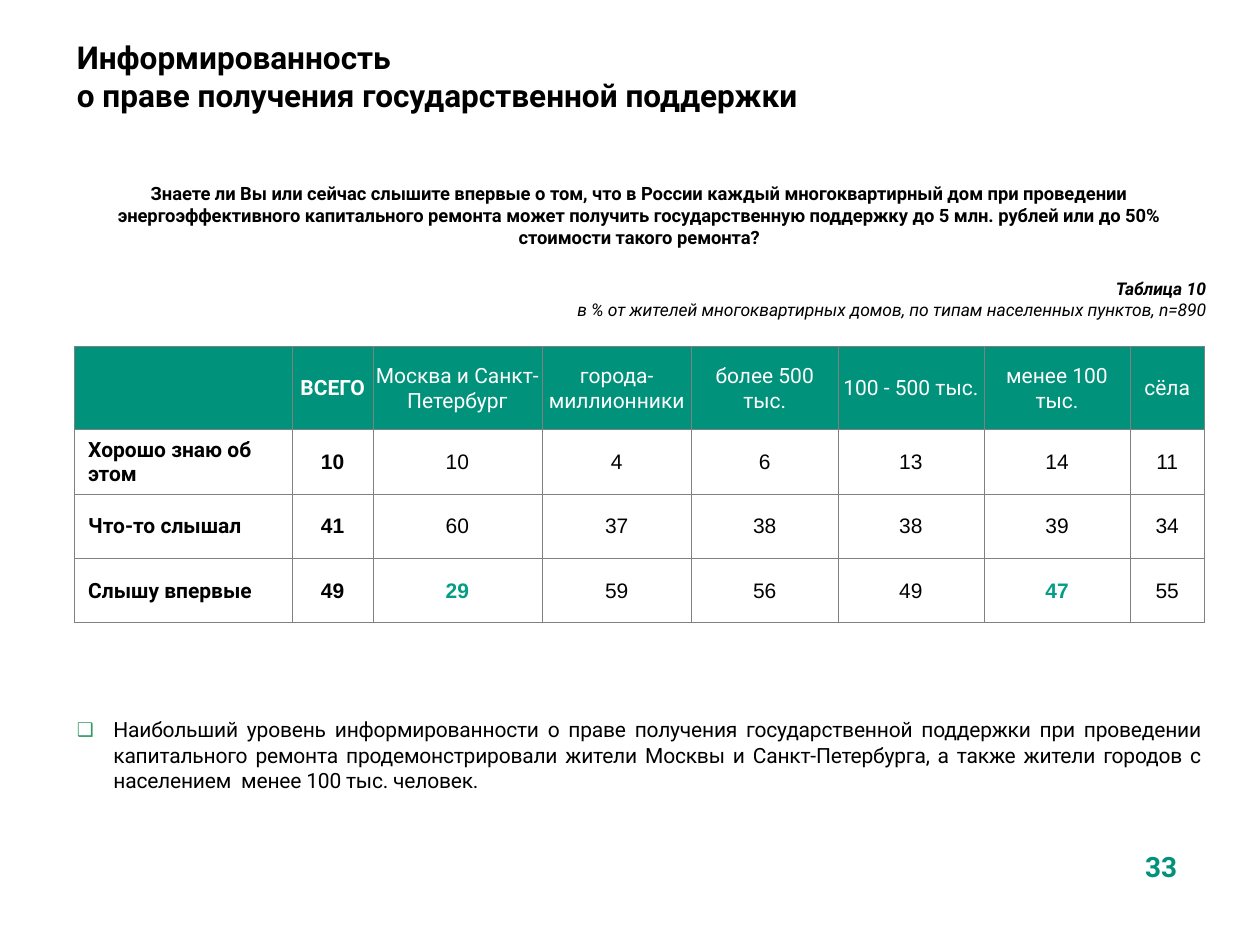
from dataclasses import dataclass

from lxml import etree
from pptx import Presentation
from pptx.dml.color import RGBColor
from pptx.enum.text import MSO_ANCHOR, MSO_AUTO_SIZE, PP_ALIGN
from pptx.oxml.ns import qn
from pptx.util import Inches, Pt

LEFT, CENTER, RIGHT, JUSTIFY = PP_ALIGN.LEFT, PP_ALIGN.CENTER, PP_ALIGN.RIGHT, PP_ALIGN.JUSTIFY
TOP, MIDDLE, BOTTOM = MSO_ANCHOR.TOP, MSO_ANCHOR.MIDDLE, MSO_ANCHOR.BOTTOM


@dataclass(frozen=True)
class Theme:
    font: str = "Roboto"
    number_font: str = "Arial"
    black: str = "000000"
    white: str = "FFFFFF"
    green: str = "00927B"
    highlight: str = "059D85"
    bullet: str = "339966"
    border: str = "808080"
    title_size: float = 18
    page_size: float = 16
    body_size: float = 12
    question_size: float = 10.5
    caption_size: float = 10


THEME = Theme()

COLUMN_WIDTHS = [1.73, 0.64, 1.34, 1.19, 1.16, 1.16, 1.16, 0.59]
ROW_HEIGHTS = [0.66, 0.51, 0.51, 0.51]
ROWS = [
    ["", "ВСЕГО", "Москва и Санкт-Петербург", "города-миллионники",
     "более 500 тыс.", "100 - 500 тыс.", "менее 100 тыс.", "сёла"],
    ["Хорошо знаю об этом", 10, 10, 4, 6, 13, 14, 11],
    ["Что-то слышал", 41, 60, 37, 38, 38, 39, 34],
    ["Слышу впервые", 49, 29, 59, 56, 49, 47, 55],
]
HIGHLIGHTED = {(3, 2), (3, 6)}


def add_span(para, text, size, color=THEME.black, bold=False, italic=False, font=THEME.font):
    span = para.add_run()
    span.text = text
    span.font.name, span.font.size = font, Pt(size)
    span.font.bold, span.font.italic = bold, italic
    span.font.color.rgb = RGBColor.from_string(color)
    return span


def place(box, left, top, width, height, anchor=TOP):
    """Position a box and return its wrapped, fixed-size text frame."""
    box.left, box.top = Inches(left), Inches(top)
    box.width, box.height = Inches(width), Inches(height)
    frame = box.text_frame
    frame.word_wrap = True
    frame.auto_size = MSO_AUTO_SIZE.NONE
    frame.vertical_anchor = anchor
    return frame


def add_text_box(page, *bounds, anchor=TOP):
    return place(page.shapes.add_textbox(0, 0, 0, 0), *bounds, anchor=anchor)


def add_bullet(para, symbol, color, percent, indent):
    properties = para._p.get_or_add_pPr()
    properties.set("marL", str(Inches(indent)))
    properties.set("indent", str(-Inches(indent)))
    tint = etree.SubElement(properties, qn("a:buClr"))
    etree.SubElement(tint, qn("a:srgbClr"), val=color)
    etree.SubElement(properties, qn("a:buSzPct"), val=str(percent * 1000))
    etree.SubElement(properties, qn("a:buChar"), char=symbol)


def add_borders(cell, color, width):
    properties = cell._tc.get_or_add_tcPr()
    for side in ("lnL", "lnR", "lnT", "lnB"):
        line = etree.SubElement(properties, qn(f"a:{side}"), w=str(Pt(width)))
        fill = etree.SubElement(line, qn("a:solidFill"))
        etree.SubElement(fill, qn("a:srgbClr"), val=color)


def fill_cell(cell, row, column, value):
    add_borders(cell, THEME.border, 0.25)
    header, label = row == 0, column == 0
    cell.fill.solid()
    cell.fill.fore_color.rgb = RGBColor.from_string(THEME.green if header else THEME.white)
    cell.vertical_anchor = MIDDLE
    cell.margin_left = cell.margin_right = cell.margin_top = Inches(0.01)
    cell.margin_bottom = 0
    if value == "":
        return
    marked = (row, column) in HIGHLIGHTED
    para = cell.text_frame.paragraphs[0]
    para.alignment = LEFT if label else CENTER
    if label:
        para._p.get_or_add_pPr().set("marL", str(Inches(0.1)))
    color = THEME.white if header else THEME.highlight if marked else THEME.black
    font = THEME.font if header or label else THEME.number_font
    add_span(para, str(value), THEME.body_size, color, bold=column < 2 or marked, font=font)


def add_awareness_table(page):
    table = page.shapes.add_table(
        len(ROWS), len(COLUMN_WIDTHS), Inches(0.59), Inches(2.75),
        Inches(sum(COLUMN_WIDTHS)), Inches(sum(ROW_HEIGHTS))).table
    table.first_row = table.horz_banding = False
    for column, width in zip(table.columns, COLUMN_WIDTHS):
        column.width = Inches(width)
    for row, height in zip(table.rows, ROW_HEIGHTS):
        row.height = Inches(height)
    for row, values in enumerate(ROWS):
        for column, value in enumerate(values):
            fill_cell(table.cell(row, column), row, column, value)


def add_title(page):
    para = place(page.shapes.title, 0.51, 0.25, 8.93, 0.71).paragraphs[0]
    para.alignment = LEFT
    add_span(para, "Информированность", THEME.title_size, bold=True)
    para.add_line_break()
    add_span(para, "о праве получения государственной поддержки", THEME.title_size, bold=True)


def add_question(page):
    frame = add_text_box(page, 0.51, 1.56, 9.13, 0.63, anchor=BOTTOM)
    frame.margin_top, frame.margin_bottom = 0, Inches(0.22)
    para = frame.paragraphs[0]
    para.alignment = CENTER
    add_span(para, "Знаете ли Вы или сейчас слышите впервые о том, что в России каждый "
             "многоквартирный дом при проведении энергоэффективного капитального ремонта "
             "может получить государственную поддержку до 5 млн. рублей или до 50% "
             "стоимости такого ремонта?", THEME.question_size, bold=True)


def add_caption(page):
    frame = add_text_box(page, 0.84, 2.16, 8.83, 0.61)
    number, basis = frame.paragraphs[0], frame.add_paragraph()
    number.alignment = basis.alignment = RIGHT
    add_span(number, "Таблица 10", THEME.caption_size, bold=True, italic=True)
    add_span(basis, "в % от жителей многоквартирных домов, по типам населенных пунктов, n=890",
             THEME.caption_size, italic=True)


def add_conclusion(page):
    para = place(page.placeholders[1], 0.51, 5.64, 9.13, 0.71).paragraphs[0]
    add_bullet(para, "❑", THEME.bullet, 90, 0.29)
    para.alignment = JUSTIFY
    para.space_before = Pt(0)
    span = add_span(para, "Наибольший уровень информированности о праве получения государственной "
                    "поддержки при проведении капитального ремонта продемонстрировали жители "
                    "Москвы и Санкт-Петербурга, а также жители городов с населением  менее "
                    "100 тыс. человек.", THEME.body_size)
    span.font._element.set("spc", "-10")


def add_page_number(page):
    para = add_text_box(page, 8.78, 6.69, 0.87, 0.52).paragraphs[0]
    para.alignment = CENTER
    add_span(para, "33", THEME.page_size, THEME.green, bold=True)


def main():
    deck = Presentation()
    deck.slide_width, deck.slide_height = Inches(10), Inches(7.5)
    page = deck.slides.add_slide(deck.slide_layouts[1])

    # Heading and survey question
    add_title(page)
    add_question(page)

    # Table with its caption
    add_caption(page)
    add_awareness_table(page)

    # Conclusion and page number
    add_conclusion(page)
    add_page_number(page)

    deck.save("out.pptx")


if __name__ == "__main__":
    main()
